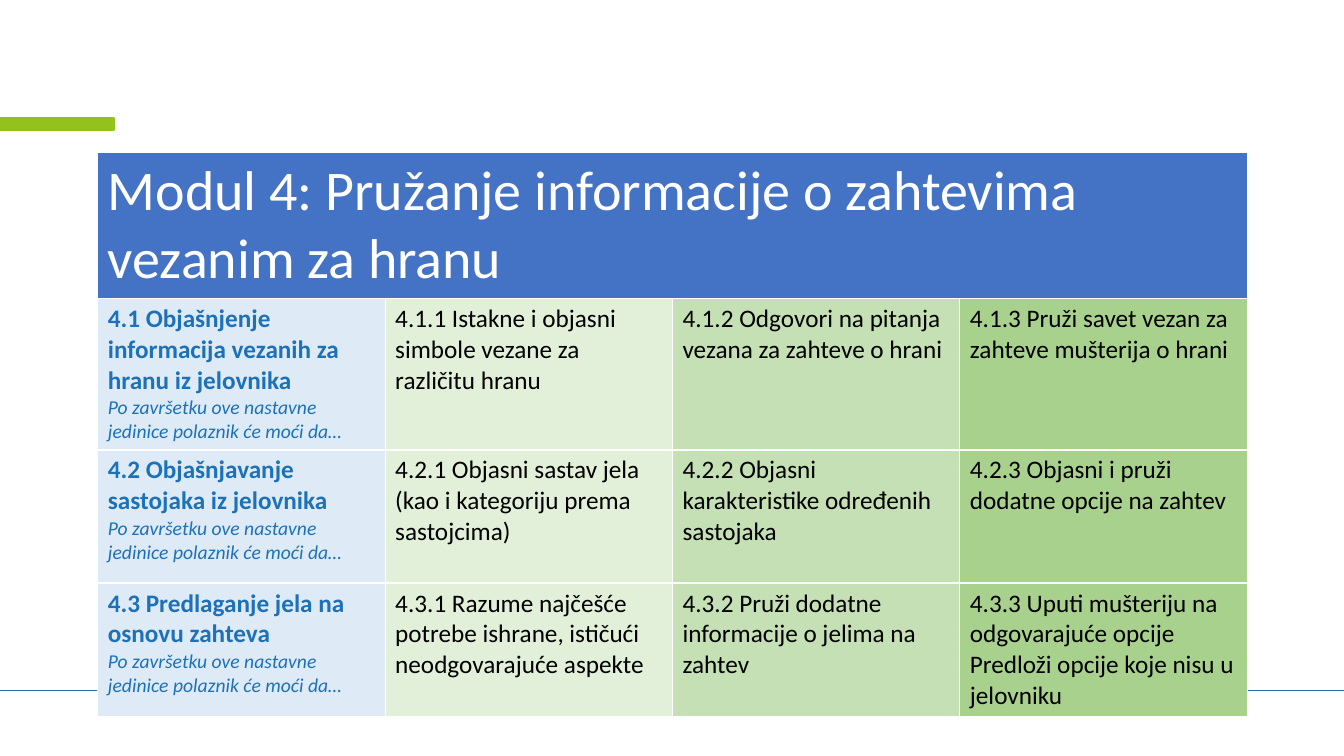
from dataclasses import dataclass

from lxml import etree
from pptx import Presentation
from pptx.dml.color import RGBColor
from pptx.enum.shapes import MSO_CONNECTOR as Connector, MSO_SHAPE as Shape
from pptx.oxml.ns import qn
from pptx.util import Inches, Pt


@dataclass(frozen=True)
class Theme:
    font: str = "Calibri"
    blue: str = "1D71B8"
    green: str = "95C11F"
    header_fill: str = "4472C4"
    column_fills: tuple = ("DEEBF7", "E2F0D9", "C5E0B4", "A9D18E")
    white: str = "FFFFFF"
    black: str = "000000"
    title_size: int = 40
    body_size: int = 18
    note_size: int = 14
    line_width: int = 1


MODULE_TITLE = "Modul 4: Pružanje informacije o zahtevima vezanim za hranu"
UNIT_NOTE = "Po završetku ove nastavne jedinice polaznik će moći da…"
# Each unit: its heading, then the paragraphs of its three outcomes.
UNITS = [
    ("4.1 Objašnjenje informacija vezanih za hranu iz jelovnika",
     ["4.1.1 Istakne i objasni simbole vezane za različitu hranu"],
     ["4.1.2 Odgovori na pitanja vezana za zahteve o hrani"],
     ["4.1.3 Pruži savet vezan za zahteve mušterija o hrani"]),
    ("4.2 Objašnjavanje sastojaka iz jelovnika",
     ["4.2.1 Objasni sastav jela (kao i kategoriju prema sastojcima)"],
     ["4.2.2 Objasni karakteristike određenih sastojaka"],
     ["4.2.3 Objasni i pruži dodatne opcije na zahtev"]),
    ("4.3 Predlaganje jela na osnovu zahteva",
     ["4.3.1 Razume najčešće potrebe ishrane, ističući neodgovarajuće aspekte"],
     ["4.3.2 Pruži dodatne informacije o jelima na zahtev"],
     ["4.3.3 Uputi mušteriju na odgovarajuće opcije",
      "Predloži opcije koje nisu u jelovniku"]),
]
ROW_HEIGHTS = [1.44, 1.5, 1.32, 1.32]
COLUMN_WIDTH = 2.85


class SlideBuilder:
    def __init__(self, presentation, theme):
        self.theme = theme
        self.slide = presentation.slides.add_slide(presentation.slide_layouts[6])

    def rule(self, y, width):
        line = self.slide.shapes.add_connector(
            Connector.STRAIGHT, 0, Inches(y), Inches(width), Inches(y))
        line.line.color.rgb = RGBColor.from_string(self.theme.blue)
        line.line.width = Pt(self.theme.line_width)
        etree.SubElement(line._element.spPr, qn("a:effectLst"))

    def bar(self, left, top, width, height):
        bar = self.slide.shapes.add_shape(
            Shape.RECTANGLE, *map(Inches, (left, top, width, height)))
        bar.shadow.inherit = False
        color = RGBColor.from_string(self.theme.green)
        bar.fill.solid()
        bar.fill.fore_color.rgb = color
        bar.line.color.rgb = color
        bar.line.width = Pt(self.theme.line_width)

    def table(self, left, top, row_heights, column_count, column_width):
        frame = self.slide.shapes.add_table(
            len(row_heights), column_count, Inches(left), Inches(top),
            Inches(column_count * column_width), Inches(sum(row_heights)))
        table = frame.table
        table.first_row = table.horz_banding = False
        for row, height in zip(table.rows, row_heights):
            row.height = Inches(height)
        for column in table.columns:
            column.width = Inches(column_width)
        return table

    def style_cell(self, cell, fill):
        properties = cell._tc.get_or_add_tcPr()
        for side in ("L", "R", "T", "B"):
            border = etree.SubElement(properties, qn(f"a:ln{side}"),
                                      w=str(Pt(self.theme.line_width)))
            solid = etree.SubElement(border, qn("a:solidFill"))
            etree.SubElement(solid, qn("a:srgbClr"), val=self.theme.white)
        cell.fill.solid()
        cell.fill.fore_color.rgb = RGBColor.from_string(fill)

    def fill_text(self, cell, texts, size, color):
        """Fill the cell with paragraphs given as (text, size, bold, italic) or plain text."""
        frame = cell.text_frame
        for index, entry in enumerate(texts):
            text, text_size, bold, italic = (
                (entry, size, False, False) if isinstance(entry, str) else entry)
            paragraph = frame.add_paragraph() if index else frame.paragraphs[0]
            run = paragraph.add_run()
            run.text = text
            run.font.name = self.theme.font
            run.font.size = Pt(text_size)
            run.font.bold = bold
            run.font.italic = italic
            run.font.color.rgb = RGBColor.from_string(color)

    def module_table(self, left, top):
        theme = self.theme
        table = self.table(left, top, ROW_HEIGHTS, len(theme.column_fills), COLUMN_WIDTH)
        for column, fill in enumerate(theme.column_fills):
            self.style_cell(table.cell(0, column), theme.header_fill)
            for row in range(1, len(ROW_HEIGHTS)):
                self.style_cell(table.cell(row, column), fill)
        header = table.cell(0, 0)
        header.merge(table.cell(0, len(theme.column_fills) - 1))
        self.fill_text(header, [MODULE_TITLE], theme.title_size, theme.white)

        for row, (heading, *outcomes) in enumerate(UNITS, start=1):
            unit = [(heading, theme.body_size, True, False),
                    (UNIT_NOTE, theme.note_size, False, True)]
            self.fill_text(table.cell(row, 0), unit, theme.body_size, theme.blue)
            for column, outcome in enumerate(outcomes, start=1):
                self.fill_text(table.cell(row, column), outcome,
                               theme.body_size, theme.black)


def main():
    presentation = Presentation()
    presentation.slide_width = Inches(13.33)
    presentation.slide_height = Inches(7.5)
    builder = SlideBuilder(presentation, Theme())
    builder.rule(6.85, 13.33)
    builder.bar(0, 1.17, 1.13, 0.12)
    builder.module_table(0.97, 1.51)
    presentation.save("out.pptx")


if __name__ == "__main__":
    main()
